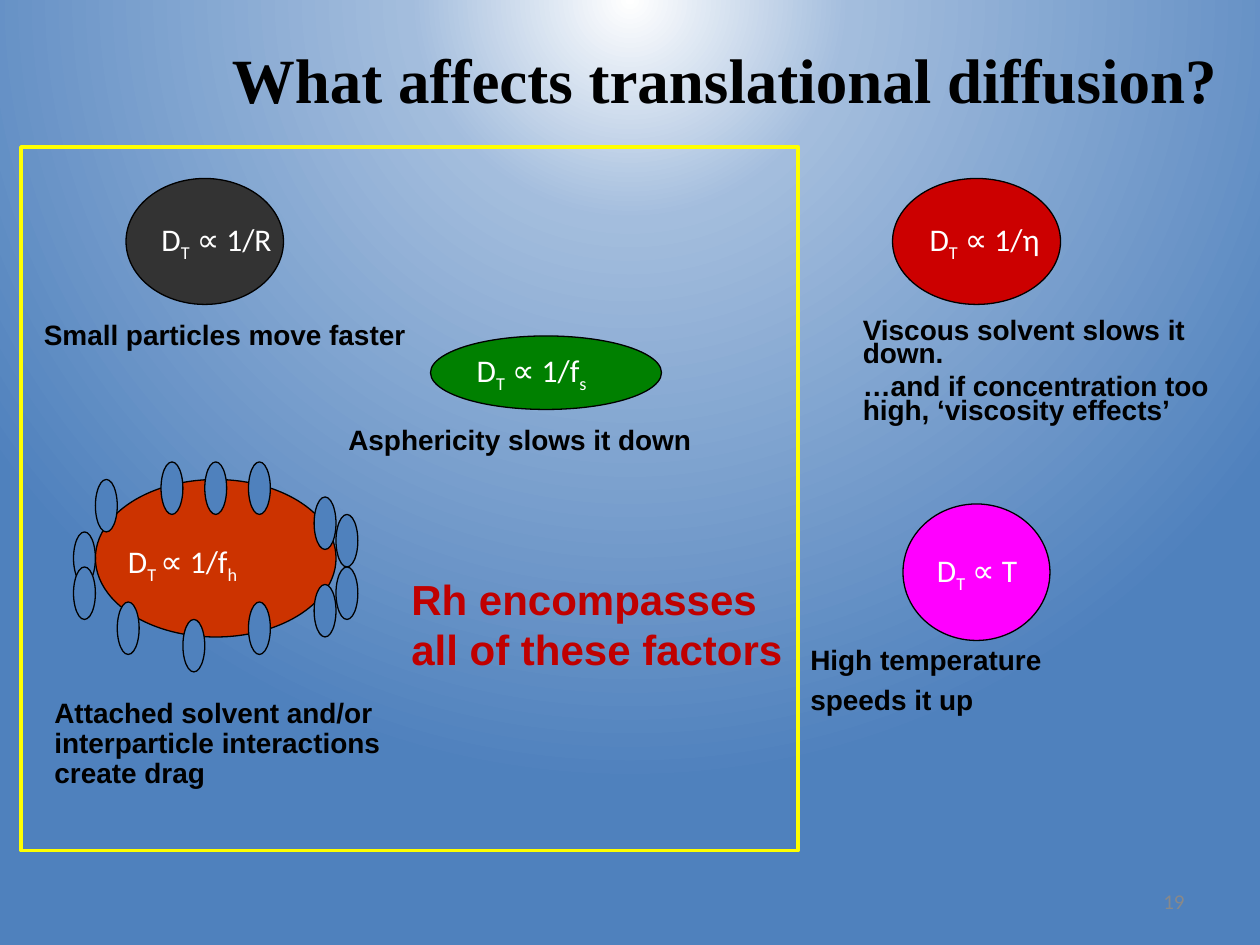
from pptx import Presentation
from pptx.dml.color import RGBColor
from pptx.enum import shapes, text
from pptx.oxml import parse_xml
from pptx.oxml.ns import nsdecls
from pptx.util import Pt

BLACK, WHITE, BLUE = "000000", "FFFFFF", "4F81BD"
LEFT, CENTER, RIGHT = text.PP_ALIGN.LEFT, text.PP_ALIGN.CENTER, text.PP_ALIGN.RIGHT
TOP, MIDDLE = text.MSO_ANCHOR.TOP, text.MSO_ANCHOR.MIDDLE

# Attached solvent molecules: (column, row) on a grid of 12.5 x 10 points
GRID_LEFT, GRID_TOP, COLUMN, ROW = 42, 264, 12.5, 10
SOLVENT = [(5, 9), (11, 7), (0, 4), (2, 8), (8, 8), (11, 2), (12, 3),
           (8, 0), (0, 6), (12, 6), (6, 0), (4, 0), (1, 1)]

# Particles: place, fill, formula parts (every second part is a subscript)
PARTICLES = [
    ((516, 288, 84, 78), "FF00FF", ["D", "T", " ∝ T"]),
    ((72, 102, 90, 72), "333333", ["D", "T", " ∝ 1/R"]),
    ((246, 192, 132, 42), "008000", ["D", "T", " ∝ 1/f", "s"]),
    ((510, 102, 96, 72), "CC0000", ["D", "T", " ∝ 1/η"]),
]

# Captions: place, paragraphs, line spacing
CAPTIONS = [
    ((456, 366, 210, 72), ["High temperature", "speeds it up"], 0.9),
    ((18, 180, 258, 48), ["Small particles move faster"], 0.9),
    ((192, 240, 258, 48), ["Asphericity slows it down"], 0.9),
    ((24, 396, 216, 88.5),
     ["Attached solvent and/or interparticle interactions create drag"], 0.9),
    ((486, 180, 216, 96),
     ["Viscous solvent slows it down.",
      "…and if concentration too high, ‘viscosity effects’"], 0.7),
]


def color(value):
    return RGBColor.from_string(value)


def set_background(page):
    """Radial gradient centred above the top edge."""
    stops = "".join(
        f'<a:gs pos="{position * 1000}"><a:srgbClr val="{value}"/></a:gs>'
        for position, value in [(0, WHITE), (28, "A3BDDD"), (100, BLUE)])
    background = parse_xml(
        f'<p:bg {nsdecls("p", "a")}><p:bgPr><a:gradFill rotWithShape="1">'
        f'<a:gsLst>{stops}</a:gsLst><a:path path="circle">'
        '<a:fillToRect l="50000" t="-80000" r="50000" b="180000"/></a:path>'
        '</a:gradFill><a:effectLst/></p:bgPr></p:bg>')
    page.element.cSld.insert(0, background)


def add_span(para, words, size, font, value, bold=False):
    span = para.add_run()
    span.text = words
    span.font.size = Pt(size)
    span.font.name = font
    span.font.bold = bold
    span.font.color.rgb = color(value)
    return span


def add_outline(page, kind, place, fill, line, width):
    shape = page.shapes.add_shape(kind, *map(Pt, place))
    shape.shadow.inherit = False
    if fill:
        shape.fill.solid()
        shape.fill.fore_color.rgb = color(fill)
    else:
        shape.fill.background()
    shape.line.color.rgb = color(line)
    shape.line.width = Pt(width)
    return shape


def add_ellipse(page, place, fill):
    return add_outline(page, shapes.MSO_SHAPE.OVAL, place, fill, BLACK, 0.75)


def write_formula(shape, parts, anchor):
    frame = shape.text_frame
    frame.word_wrap = False
    frame.vertical_anchor = anchor
    para = frame.paragraphs[0]
    para.alignment = LEFT
    for index, part in enumerate(parts):
        span = add_span(para, part, 18, "Calibri", WHITE)
        if index % 2:
            span.font._element.set("baseline", "-25000")


def add_text(page, place, lines, size, font, value, bold=True, align=LEFT,
             anchor=TOP, spacing=1.0, before=0):
    box = page.shapes.add_textbox(*map(Pt, place))
    frame = box.text_frame
    frame.word_wrap = True
    frame.vertical_anchor = anchor
    for index, words in enumerate(lines):
        para = frame.add_paragraph() if index else frame.paragraphs[0]
        para.alignment = align
        para.line_spacing = spacing
        para.space_before = Pt(before)
        add_span(para, words, size, font, value, bold)


def add_solvated_particle(page):
    add_ellipse(page, (GRID_LEFT + COLUMN, GRID_TOP + ROW, 11 * COLUMN, 9 * ROW), "CC3300")
    for column, row in SOLVENT:
        place = (GRID_LEFT + column * COLUMN, GRID_TOP + row * ROW, COLUMN, 3 * ROW)
        add_ellipse(page, place, BLUE)
    label = page.shapes.add_textbox(*map(Pt, (66, 306, 104, 36)))
    write_formula(label, ["D", "T ", "∝ 1/f", "h"], TOP)


def main():
    deck = Presentation()
    deck.slide_width, deck.slide_height = Pt(720), Pt(540)
    page = deck.slides.add_slide(deck.slide_layouts[6])
    set_background(page)

    add_text(page, (108, 0, 612, 90), ["What affects translational diffusion?"],
             36, "Times New Roman", BLACK, align=CENTER, anchor=MIDDLE)
    for place, fill, formula in PARTICLES:
        write_formula(add_ellipse(page, place, fill), formula, MIDDLE)
    add_solvated_particle(page)
    for place, lines, spacing in CAPTIONS:
        add_text(page, place, lines, 16, "Arial", BLACK, spacing=spacing, before=5.5)

    add_outline(page, shapes.MSO_SHAPE.RECTANGLE, (12, 84, 444, 402), None, "FFFF00", 2)
    add_text(page, (228, 324, 228, 65.5), ["Rh encompasses all of these factors"],
             24, "Arial", "C00000", before=12)
    add_text(page, (516, 500.5, 168, 28.75), ["19"], 12, "Calibri", "898989",
             bold=False, align=RIGHT, anchor=MIDDLE)
    deck.save("out.pptx")


if __name__ == "__main__":
    main()
